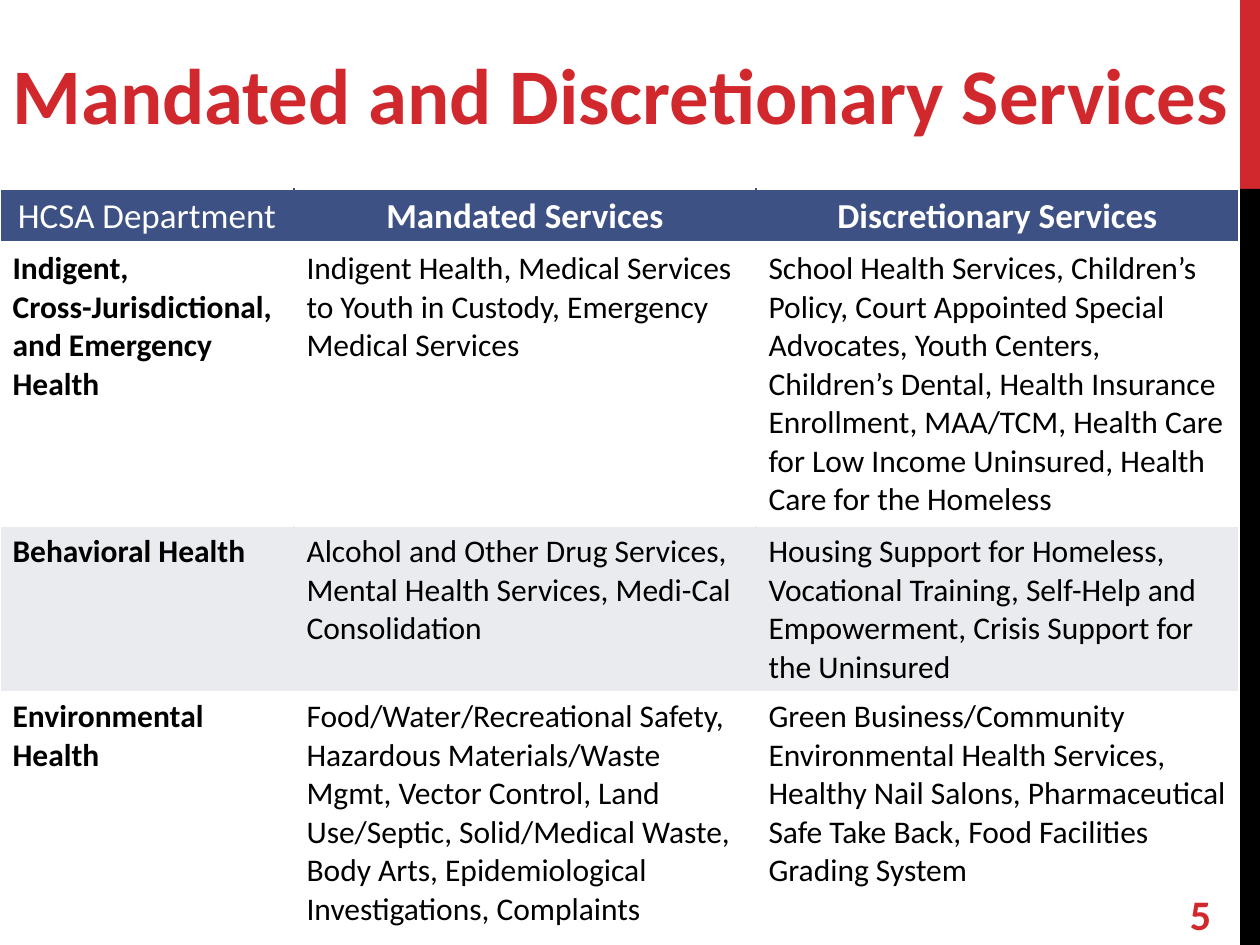
from lxml import etree
from pptx import Presentation
from pptx import util as u
from pptx.dml.color import RGBColor
from pptx.enum import shapes, text
from pptx.oxml.ns import qn

RED = RGBColor(0xD1, 0x28, 0x2E)
BLACK = RGBColor(0, 0, 0)
WHITE = RGBColor(255, 255, 255)
BLUE = RGBColor(0x3D, 0x51, 0x85)
GREY = RGBColor(0xEA, 0xEB, 0xEE)
LEFT, MID = text.PP_ALIGN.LEFT, text.PP_ALIGN.CENTER


def px(n):
    return u.Emu(round(n * 914400 / 126))


def write(frame, lines, size, color, bold, align=LEFT):
    frame.word_wrap = True
    for i, line in enumerate(lines):
        para = frame.paragraphs[0] if i == 0 else frame.add_paragraph()
        para.alignment = align
        run = para.add_run()
        run.text = line
        run.font.name = "Calibri"
        run.font.size = u.Pt(size)
        run.font.bold = bold
        run.font.color.rgb = color


prs = Presentation()
prs.slide_width, prs.slide_height = px(1260), px(945)
slide = prs.slides.add_slide(prs.slide_layouts[6])

for top, high, color in [(0, 189, RED), (189, 756, BLACK)]:
    bar = slide.shapes.add_shape(
        shapes.MSO_SHAPE.RECTANGLE, px(1240), px(top), px(20), px(high))
    bar.shadow.inherit = False
    bar.fill.solid()
    bar.fill.fore_color.rgb = color
    bar.line.fill.background()

for x, y, w, h, words, size, align in [
    (0, 43, 1260, 101, "Mandated and Discretionary Services", 45, LEFT),
    (1165, 883, 71, 62, "5", 24, MID),
]:
    box = slide.shapes.add_textbox(px(x), px(y), px(w), px(h))
    box.text_frame.vertical_anchor = text.MSO_ANCHOR.MIDDLE
    write(box.text_frame, [words], size, RED, True, align)

ROWS = [
    [["HCSA Department"], ["Mandated Services"], ["Discretionary Services"]],
    [["Indigent,", "Cross-Jurisdictional,", "and Emergency Health"],
     ["Indigent Health, Medical Services to Youth in Custody, "
      "Emergency Medical Services"],
     ["School Health Services, Children’s Policy, Court Appointed Special "
      "Advocates, Youth Centers, Children’s Dental, Health Insurance "
      "Enrollment, MAA/TCM, Health Care for Low Income Uninsured, "
      "Health Care for the Homeless"]],
    [["Behavioral Health"],
     ["Alcohol and Other Drug Services, Mental Health Services, "
      "Medi-Cal Consolidation"],
     ["Housing Support for Homeless, Vocational Training, Self-Help and "
      "Empowerment, Crisis Support for the Uninsured"]],
    [["Environmental Health"],
     ["Food/Water/Recreational Safety, Hazardous Materials/Waste Mgmt, "
      "Vector Control, Land Use/Septic, Solid/Medical Waste, Body Arts, "
      "Epidemiological Investigations, Complaints"],
     ["Green Business/Community Environmental Health Services,",
      "Healthy Nail Salons, Pharmaceutical Safe Take Back, "
      "Food Facilities Grading System"]],
]
WIDE = [294, 462, 483]
HIGH = [54, 283, 165, 243]
FILLS = [BLUE, None, GREY, None]

table = slide.shapes.add_table(
    4, 3, px(0), px(189), px(sum(WIDE)), px(sum(HIGH))).table
for col, w in zip(table.columns, WIDE):
    col.width = px(w)
for row, h in zip(table.rows, HIGH):
    row.height = px(h)

for r, row in enumerate(ROWS):
    head = r == 0
    fill = FILLS[r]
    for c, lines in enumerate(row):
        cell = table.cell(r, c)
        bold = c > 0 if head else c == 0
        write(cell.text_frame, lines, 20 if head else 18,
              WHITE if head else BLACK, bold, MID if head else LEFT)
        cell.vertical_anchor = (
            text.MSO_ANCHOR.MIDDLE if head else text.MSO_ANCHOR.TOP)
        inner = fill or WHITE
        edges = [("L", inner if c > 0 else WHITE, 1),
                 ("R", inner if c < 2 else WHITE, 1),
                 ("T", WHITE, 3 if r == 1 else 1),
                 ("B", WHITE, 3 if head else 1)]
        props = cell._tc.get_or_add_tcPr()
        for side, color, pts in edges:
            line = etree.SubElement(
                props, qn("a:ln" + side), w=str(u.Pt(pts)))
            solid = etree.SubElement(line, qn("a:solidFill"))
            etree.SubElement(solid, qn("a:srgbClr"), val=str(color))
        if fill:
            cell.fill.solid()
            cell.fill.fore_color.rgb = fill
        else:
            cell.fill.background()

prs.save("out.pptx")
